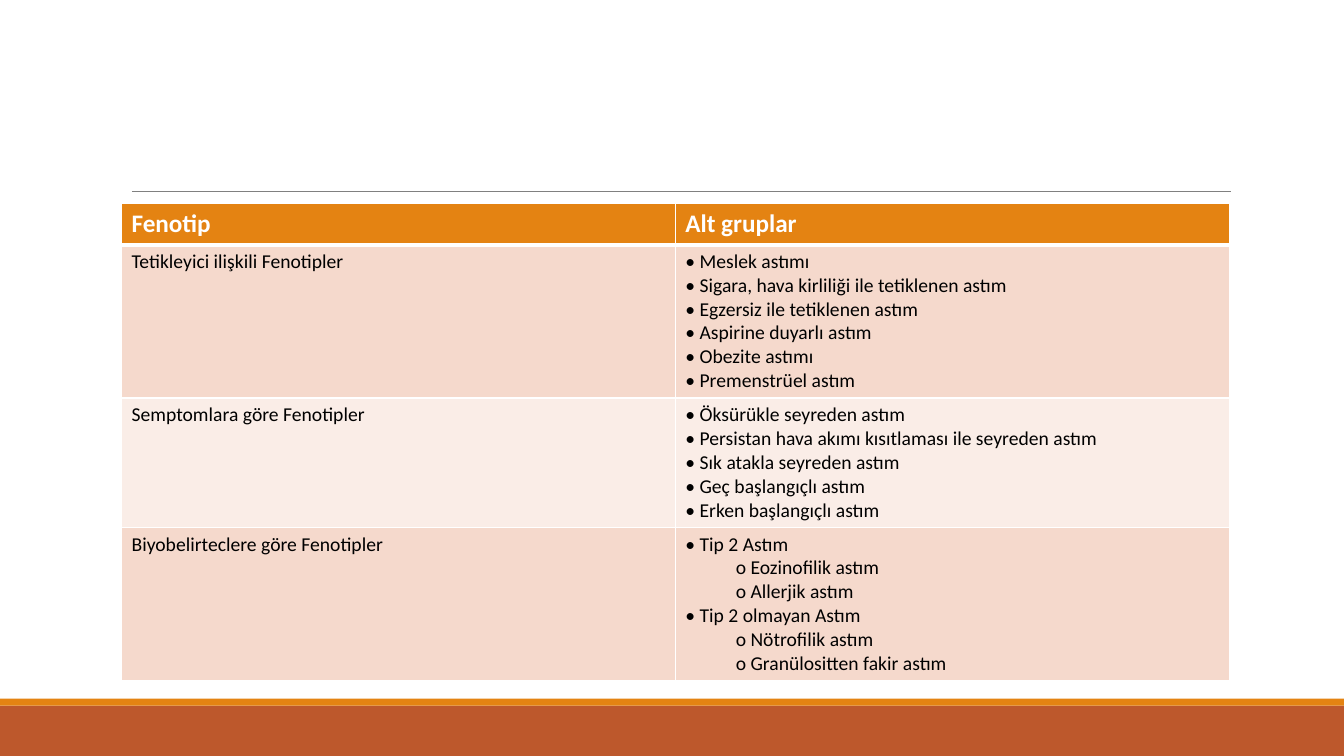
import pptx
import pptx.dml.color
import pptx.enum.shapes
import pptx.oxml
import pptx.oxml.ns
import pptx.util

Pt = pptx.util.Pt
WIDTH, HEIGHT = 960, 540
ORANGE, RUST, GRAY, WHITE, BLACK = "E48312", "BD582C", "808080", "FFFFFF", "000000"
BANDS = ["F5D9CC", "FAEDE7"]
HEADER = {"size": Pt(18), "bold": True}
BODY = {"size": Pt(14), "bold": False}
MARKERS = ["• ", "o "]
SUB_INDENT = 36

# Each subgroup is (level, text)
PHENOTYPES = [
    ("Tetikleyici ilişkili Fenotipler", [
        (0, "Meslek astımı"),
        (0, "Sigara, hava kirliliği ile tetiklenen astım"),
        (0, "Egzersiz ile tetiklenen astım"),
        (0, "Aspirine duyarlı astım"),
        (0, "Obezite astımı"),
        (0, "Premenstrüel astım"),
    ]),
    ("Semptomlara göre Fenotipler", [
        (0, "Öksürükle seyreden astım"),
        (0, "Persistan hava akımı kısıtlaması ile seyreden astım"),
        (0, "Sık atakla seyreden astım"),
        (0, "Geç başlangıçlı astım"),
        (0, "Erken başlangıçlı astım"),
    ]),
    ("Biyobelirteclere göre Fenotipler", [
        (0, "Tip 2 Astım"),
        (1, "Eozinofilik astım"),
        (1, "Allerjik astım"),
        (0, "Tip 2 olmayan Astım"),
        (1, "Nötrofilik astım"),
        (1, "Granülositten fakir astım"),
    ]),
]


def rgb(value):
    return pptx.dml.color.RGBColor.from_string(value)


class SlideBuilder:
    font = "Calibri"

    def __init__(self, slide):
        self.s = slide

    def bar(self, x, y, w, h, color):
        sp = self.s.shapes.add_shape(
            pptx.enum.shapes.MSO_SHAPE.RECTANGLE, Pt(x), Pt(y), Pt(w), Pt(h))
        sp.shadow.inherit = False
        sp.fill.solid()
        sp.fill.fore_color.rgb = rgb(color)
        sp.line.fill.background()

    def rule(self, x1, x2, y, color, width):
        """Draw a horizontal line."""
        cn = self.s.shapes.add_connector(
            pptx.enum.shapes.MSO_CONNECTOR.STRAIGHT, Pt(x1), Pt(y), Pt(x2), Pt(y))
        cn.line.color.rgb = rgb(color)
        cn.line.width = Pt(width)
        cn._element.spPr.append(pptx.oxml.parse_xml(
            f'<a:effectLst {pptx.oxml.ns.nsdecls("a")}/>'))

    def table(self, x, y, col_widths, row_heights):
        frame = self.s.shapes.add_table(
            len(row_heights), len(col_widths), Pt(x), Pt(y),
            Pt(sum(col_widths)), Pt(sum(row_heights)))
        table = frame.table
        table.horz_banding = False
        for col, width in zip(table.columns, col_widths):
            col.width = Pt(width)
        for row, height in zip(table.rows, row_heights):
            row.height = Pt(height)
        return table

    def cell(self, cell, lines, fill, color, style, top=1, bottom=1):
        """Fill a cell with (level, text) lines and give it white borders."""
        tc_pr = cell._tc.get_or_add_tcPr()
        for side, width in {"L": 1, "R": 1, "T": top, "B": bottom}.items():
            tc_pr.append(pptx.oxml.parse_xml(
                f'<a:ln{side} {pptx.oxml.ns.nsdecls("a")} w="{Pt(width)}"><a:solidFill>'
                f'<a:srgbClr val="{WHITE}"/></a:solidFill></a:ln{side}>'))
        cell.fill.solid()
        cell.fill.fore_color.rgb = rgb(fill)
        tf = cell.text_frame
        for i, (level, text) in enumerate(lines):
            p = tf.add_paragraph() if i else tf.paragraphs[0]
            if level:
                p.level = level
                p._p.get_or_add_pPr().set("marL", str(Pt(SUB_INDENT * level)))
            r = p.add_run()
            r.text = text
            for name, value in {"name": self.font, **style}.items():
                setattr(r.font, name, value)
            r.font.color.rgb = rgb(color)


def main():
    prs = pptx.Presentation()
    prs.slide_width, prs.slide_height = Pt(WIDTH), Pt(HEIGHT)
    b = SlideBuilder(prs.slides.add_slide(prs.slide_layouts[6]))

    b.bar(0, 504, WIDTH, 36, RUST)
    b.bar(0, 499, WIDTH, 5, ORANGE)
    b.rule(94.3, 879, 136.8, GRAY, 0.5)

    heights = [29.2] + [7.2 + 17.05 * len(groups) for _, groups in PHENOTYPES]
    table = b.table(86.8, 145.6, [395.6, 395.6], heights)
    for col, title in enumerate(["Fenotip", "Alt gruplar"]):
        b.cell(table.cell(0, col), [(0, title)], ORANGE, WHITE, HEADER, bottom=3)
    for row, (phenotype, groups) in enumerate(PHENOTYPES, 1):
        marked = [(level, MARKERS[level] + text) for level, text in groups]
        for col, lines in enumerate([[(0, phenotype)], marked]):
            b.cell(table.cell(row, col), lines, BANDS[(row - 1) % 2], BLACK, BODY,
                   top=3 if row == 1 else 1)

    prs.save("out.pptx")


if __name__ == "__main__":
    main()
